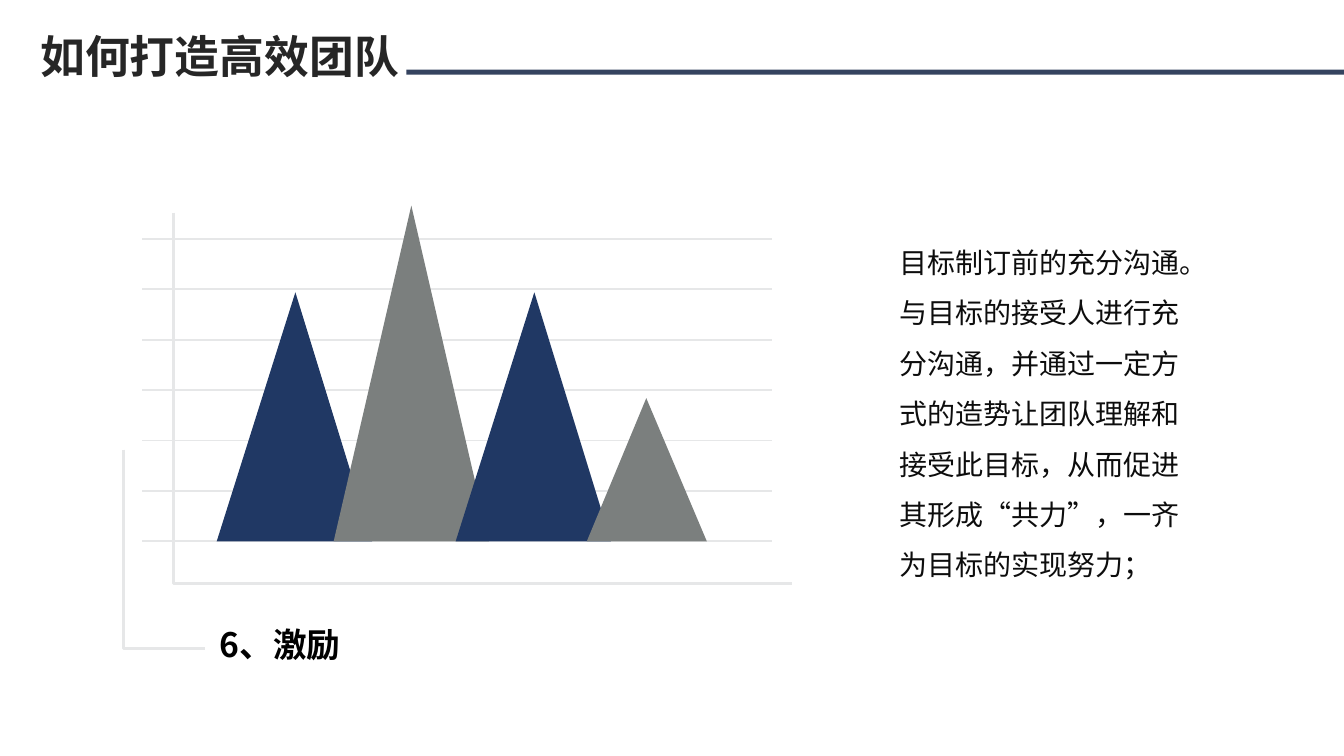
from typing import NamedTuple

from lxml import etree
from pptx import Presentation
from pptx.dml.color import RGBColor
from pptx.enum.shapes import MSO_CONNECTOR, MSO_SHAPE
from pptx.enum.text import MSO_ANCHOR, PP_ALIGN
from pptx.oxml.ns import qn
from pptx.util import Inches, Pt

RECT, STRAIGHT = MSO_SHAPE.RECTANGLE, MSO_CONNECTOR.STRAIGHT
TOP, LEFT = MSO_ANCHOR.TOP, PP_ALIGN.LEFT

FONT = "Noto Sans CJK SC"
BAR = RGBColor(0x35, 0x43, 0x5F)
NAVY = RGBColor(0x20, 0x38, 0x64)
GREY = RGBColor(0x7B, 0x7F, 0x7E)
RULE = RGBColor(0xE6, 0xE7, 0xE8)
TITLE = RGBColor(0x26, 0x26, 0x26)
BLACK = RGBColor(0, 0, 0)
BODY = RGBColor(0x0D, 0x0D, 0x0D)

BASELINE = 5.37


class Peak(NamedTuple):
    left: float
    apex: float
    right: float
    top: float
    color: RGBColor


class Bracket(NamedTuple):
    left: float
    top: float
    right: float
    bottom: float
    weight: float


class TextSpec(NamedTuple):
    text: str
    box: tuple[float, float, float, float]
    insets: tuple[float, float]
    spacing: float
    font: dict


PEAKS = [
    Peak(2.15, 2.93, 3.69, 2.9, NAVY),
    Peak(3.31, 4.08, 4.85, 2.04, GREY),
    Peak(4.52, 5.3, 6.06, 2.9, NAVY),
    Peak(5.82, 6.41, 7.01, 3.95, GREY),
]
BRACKETS = [
    Bracket(1.72, 2.11, 7.86, 5.79, 2.38),
    Bracket(1.23, 4.46, 2.03, 6.43, 2.13),
]
HEADING = TextSpec("如何打造高效团队", (0.3, 0.23, 4.24, 0.64), (0.1, 0.05), 1,
                   {"size": Pt(32), "bold": True})
LABEL = TextSpec("6、激励", (2.18, 6.19, 1.22, 0.4), (0, 0), 1,
                 {"size": Pt(24), "bold": True})
NOTE = TextSpec(
    "目标制订前的充分沟通。与目标的接受人进行充分沟通，并通过一定方式的造势让团队理解和"
    "接受此目标，从而促进其形成“共力”，一齐为目标的实现努力；",
    (8.83, 2.22, 3.11, 3.63), (0.09, 0.05), 1.5, {"size": Pt(20), "bold": False})


def write(sp, spec: TextSpec, color: RGBColor) -> None:
    sp.left, sp.top, sp.width, sp.height = map(Inches, spec.box)
    tf = sp.text_frame
    side, end = map(Inches, spec.insets)
    frame = {"word_wrap": True, "vertical_anchor": TOP, "margin_left": side,
             "margin_right": side, "margin_top": end, "margin_bottom": end}
    for name, value in frame.items():
        setattr(tf, name, value)
    p = tf.paragraphs[0]
    p.alignment, p.line_spacing = LEFT, spec.spacing
    r = p.add_run()
    r.text = spec.text
    for name, value in {"name": FONT, **spec.font}.items():
        setattr(r.font, name, value)
    r.font.color.rgb = color
    ea = etree.SubElement(r.font._element, qn("a:ea"))
    ea.set("typeface", FONT)


def add_outline(slide, points: list[tuple[float, float]], close: bool):
    (x, y), *rest = points
    builder = slide.shapes.build_freeform(Inches(x), Inches(y))
    builder.add_line_segments([(Inches(a), Inches(b)) for a, b in rest], close=close)
    sp = builder.convert_to_shape()
    sp.shadow.inherit = False
    return sp


def add_peak(slide, peak: Peak) -> None:
    sp = add_outline(slide, [(peak.apex, peak.top), (peak.left, BASELINE),
                             (peak.right, BASELINE)], True)
    sp.fill.solid()
    sp.fill.fore_color.rgb = peak.color
    sp.line.fill.background()


def add_bracket(slide, b: Bracket) -> None:
    sp = add_outline(slide, [(b.left, b.top), (b.left, b.bottom),
                             (b.right, b.bottom)], False)
    sp.fill.background()
    sp.line.color.rgb = RULE
    sp.line.width = Pt(b.weight)


def add_gridline(slide, y: float) -> None:
    line = slide.shapes.add_connector(STRAIGHT, Inches(1.41), Inches(y),
                                      Inches(7.66), Inches(y))
    line.line.color.rgb = RULE
    line.line.width = Pt(1.25)
    etree.SubElement(line._element.spPr, qn("a:effectLst"))


def main() -> None:
    prs = Presentation()
    prs.slide_width, prs.slide_height = Inches(13.33), Inches(7.5)
    slide = prs.slides.add_slide(prs.slide_layouts[5])

    # Title and its rule
    write(slide.shapes.title, HEADING, TITLE)
    bar = slide.shapes.add_shape(RECT, Inches(4.03), Inches(0.69),
                                 Inches(9.3), Inches(0.05))
    bar.shadow.inherit = False
    bar.fill.solid()
    bar.fill.fore_color.rgb = BAR
    bar.line.fill.background()

    # Gridlines, peaks and axes
    for i in range(7):
        add_gridline(slide, BASELINE - 3 + 0.5 * i)
    for peak in PEAKS:
        add_peak(slide, peak)
    for bracket in BRACKETS:
        add_bracket(slide, bracket)

    # Label and explanation
    for spec, color in ((LABEL, BLACK), (NOTE, BODY)):
        write(slide.shapes.add_textbox(0, 0, 0, 0), spec, color)

    prs.save("out.pptx")


if __name__ == "__main__":
    main()
